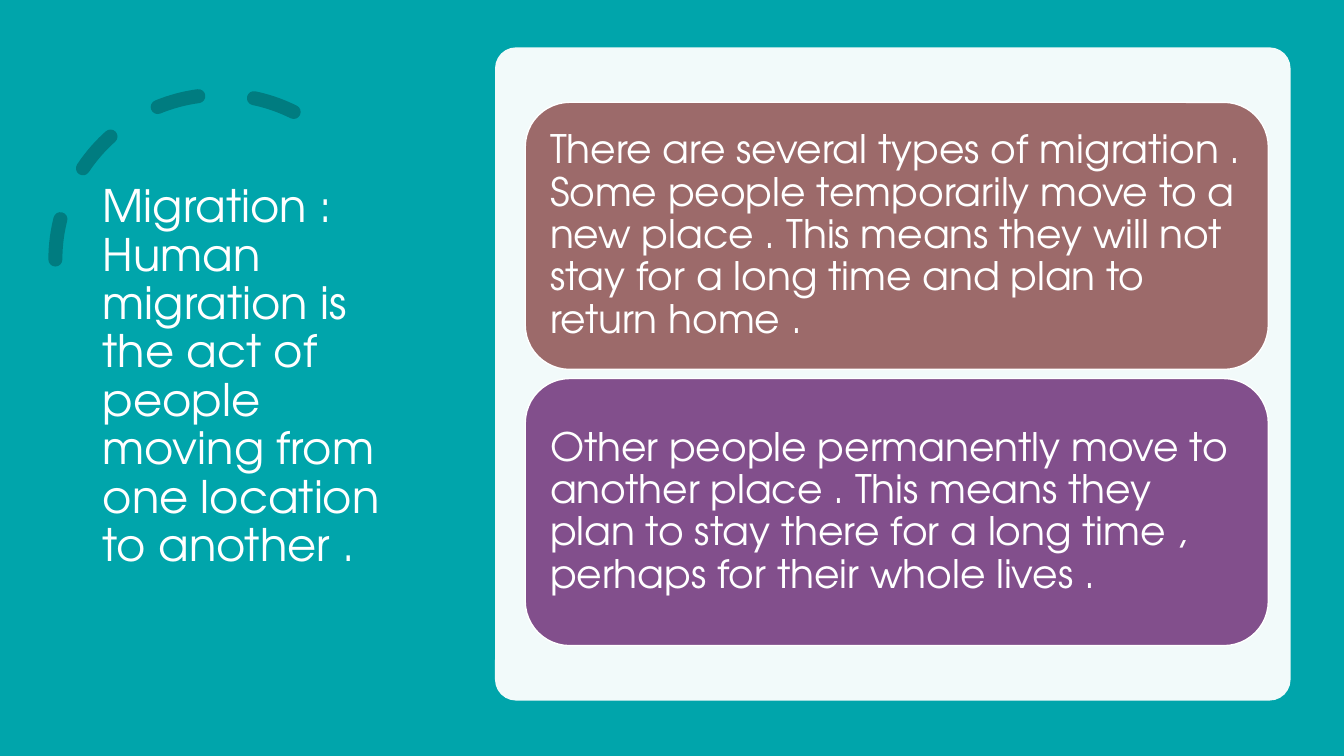
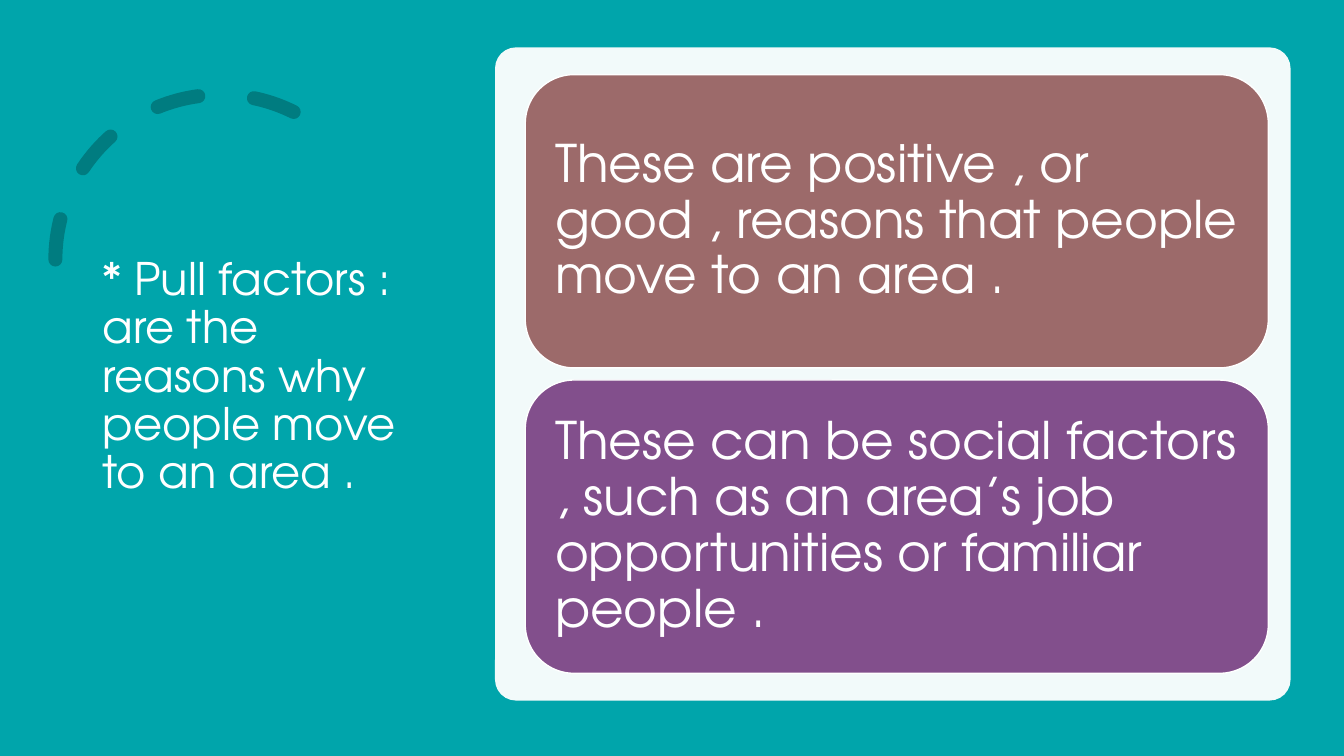
"""Builds two slides on migration: a title beside a panel of two text cards."""
from dataclasses import dataclass

from lxml import etree
from pptx import Presentation
from pptx.dml.color import RGBColor
from pptx.enum.dml import MSO_LINE
from pptx.enum.shapes import MSO_SHAPE
from pptx.enum.text import MSO_ANCHOR, PP_ALIGN
from pptx.oxml.ns import qn
from pptx.util import Inches, Pt

ARC = MSO_SHAPE.ARC
ROUNDED = MSO_SHAPE.ROUNDED_RECTANGLE
MIDDLE = MSO_ANCHOR.MIDDLE
LEFT = PP_ALIGN.LEFT
DASH = MSO_LINE.DASH


@dataclass(frozen=True)
class Theme:
    """Colours, font and type sizes shared by the slides."""
    background: RGBColor = RGBColor(0x00, 0xA5, 0xAB)
    arc: RGBColor = RGBColor(0x00, 0x7C, 0x80)
    white: RGBColor = RGBColor(0xFF, 0xFF, 0xFF)
    cards: tuple = (RGBColor(0x9C, 0x6A, 0x6A), RGBColor(0x82, 0x4F, 0x8C))
    font: str = "TeX Gyre Adventor"
    title_size: int = 32
    line_spacing: float = 0.9


THEME = Theme()
PANEL_TOP, PANEL_HEIGHT = 0.47, 6.48
CARD_LEFT, CARD_WIDTH = 5.21, 7.37

SLIDES = [
    {
        "title": "Migration : Human migration is the act of people moving "
                 "from one location to another .",
        "cards": [
            "There are several types of migration . Some people temporarily "
            "move to a new place . This means they will not stay for a long "
            "time and plan to return home .",
            "Other people permanently move to another place . This means they "
            "plan to stay there for a long time , perhaps for their whole "
            "lives .",
        ],
        "size": 28, "height": 2.65, "gap": 0.09,
    },
    {
        "title": "* Pull factors : are the reasons why people move to an area .",
        "cards": [
            "These are positive , or good , reasons that people move to an "
            "area .",
            "These can be social factors , such as an area’s job "
            "opportunities or familiar people .",
        ],
        "size": 37, "height": 2.91, "gap": 0.12,
    },
]


def write(sp, text, size):
    """Write white, left-aligned, vertically centred text into a shape."""
    tf = sp.text_frame
    tf.text = text
    tf.word_wrap = True
    tf.vertical_anchor = MIDDLE
    p = tf.paragraphs[0]
    p.alignment = LEFT
    p.line_spacing = THEME.line_spacing
    font = p.runs[0].font
    font.name = THEME.font
    font.size = Pt(size)
    font.color.rgb = THEME.white


def add_shape(s, kind, left, top, width, height, fill=None):
    """Add a shadowless preset shape with an optional solid fill."""
    sp = s.shapes.add_shape(kind, Inches(left), Inches(top),
                            Inches(width), Inches(height))
    sp.shadow.inherit = False
    if fill is None:
        sp.fill.background()
    else:
        sp.fill.solid()
        sp.fill.fore_color.rgb = fill
    return sp


def add_dashed_arc(s):
    """Add the dashed, round-capped arc above the title."""
    sp = add_shape(s, ARC, 0.55, 0.94, 3.27, 3.27)
    start_degrees = 243.55
    sp.adjustments[0] = start_degrees * 0.6
    sp.adjustments[1] = 0
    sp.line.color.rgb = THEME.arc
    sp.line.width = Pt(10)
    sp.line.dash_style = DASH
    props = sp.element.spPr
    props.find(qn("a:xfrm")).set("flipH", "1")
    props.find(qn("a:ln")).set("cap", "rnd")


def add_title(s, text):
    """Add the title text on the left."""
    sp = s.shapes.add_textbox(Inches(0.92), Inches(PANEL_TOP + 0.23),
                              Inches(3.23), Inches(6.09))
    write(sp, text, THEME.title_size)


def add_panel(s):
    """Add the slightly transparent white panel behind the cards."""
    sp = add_shape(s, ROUNDED, 4.91, PANEL_TOP, 7.89, PANEL_HEIGHT, THEME.white)
    sp.adjustments[0] = 0.032
    sp.line.fill.background()
    color = sp.element.spPr.find(qn("a:solidFill")).find(qn("a:srgbClr"))
    etree.SubElement(color, qn("a:alpha")).set("val", "95000")


def add_cards(s, texts, size, height, gap):
    """Stack the text cards, centred vertically on the panel."""
    stack = len(texts) * (height + gap) - gap
    top = PANEL_TOP + (PANEL_HEIGHT - stack) / 2
    for i, (text, fill) in enumerate(zip(texts, THEME.cards)):
        sp = add_shape(s, ROUNDED, CARD_LEFT, top + i * (height + gap),
                       CARD_WIDTH, height, fill)
        sp.line.color.rgb = THEME.white
        sp.line.width = Pt(1)
        write(sp, text, size)
        tf = sp.text_frame
        tf.margin_left = tf.margin_right = Pt(size * 0.3)
        tf.margin_top = tf.margin_bottom = Pt(size * 0.3)


def add_slide(prs, content):
    """Add one slide with its arc, title, panel and cards."""
    s = prs.slides.add_slide(prs.slide_layouts[6])
    s.background.fill.solid()
    s.background.fill.fore_color.rgb = THEME.background
    add_dashed_arc(s)
    add_title(s, content["title"])
    add_panel(s)
    add_cards(s, content["cards"], content["size"],
              content["height"], content["gap"])


def main():
    """Build and save the presentation."""
    prs = Presentation()
    prs.slide_width = Inches(13.33)
    prs.slide_height = Inches(7.5)
    for content in SLIDES:
        add_slide(prs, content)
    prs.save("out.pptx")


if __name__ == "__main__":
    main()
